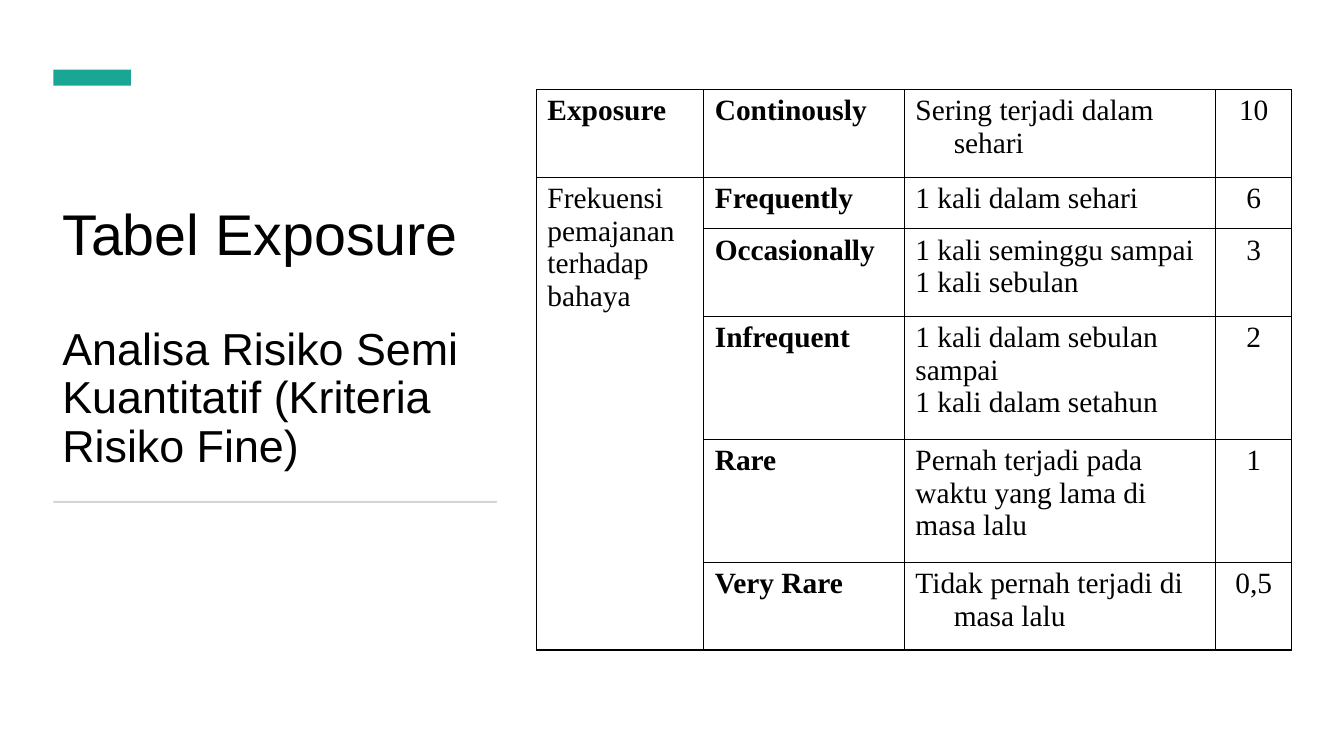
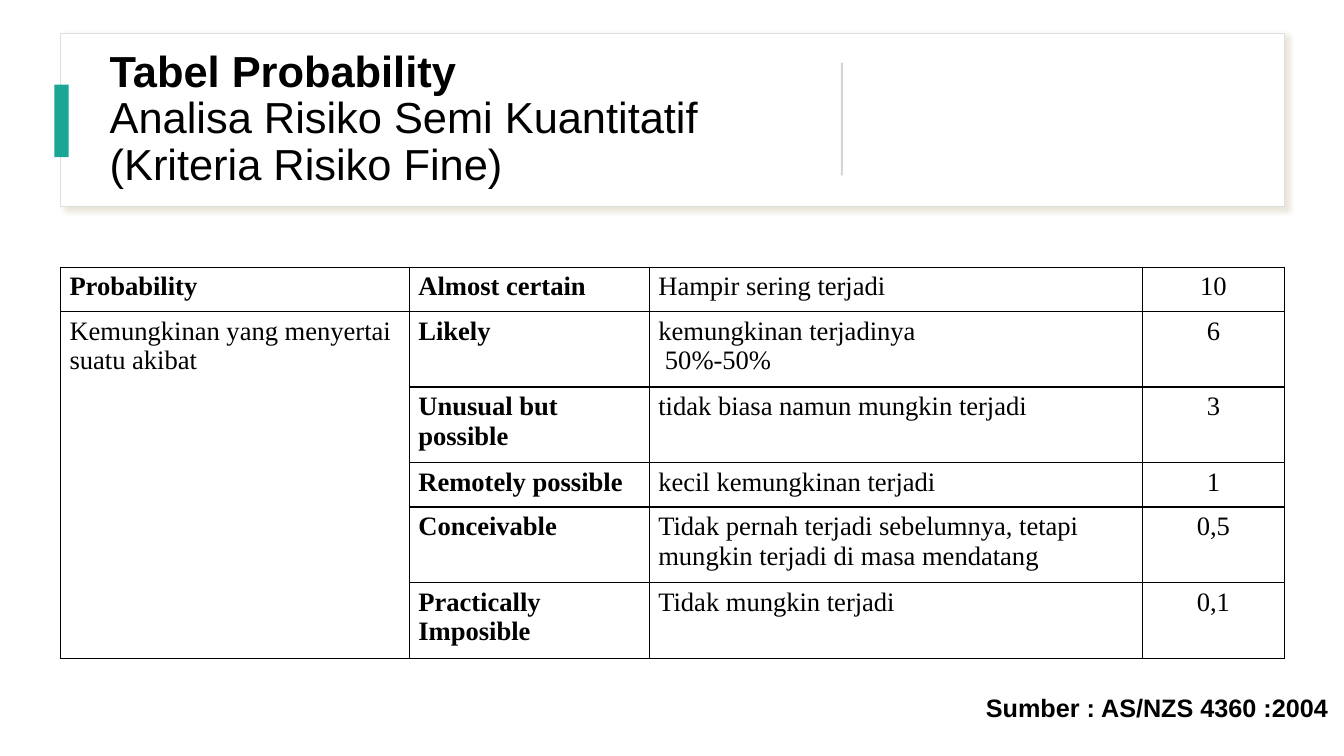
from dataclasses import dataclass

from lxml.etree import SubElement
from pptx import Presentation
from pptx.dml.color import RGBColor
from pptx.enum.shapes import MSO_SHAPE as Preset
from pptx.enum.text import MSO_ANCHOR as Anchor, PP_ALIGN as Align
from pptx.oxml.ns import qn
from pptx.shapes.autoshape import Shape
from pptx.slide import Slide
from pptx.table import _Cell as Cell
from pptx.text.text import _Paragraph as Paragraph
from pptx.util import Inches, Pt

COLORS = {
    "text": "000000",
    "paper": "FFFFFF",
    "accent": "19A695",
    "rule": "D5D5D5",
    "frame": "DEDEDE",
    "shadow": "D5D0B5",
}
TITLE_FONT = "Arial"
TABLE_FONT = "Times New Roman"
HANGING_INDENT = 0.38
SUBTITLE = "Analisa Risiko Semi Kuantitatif (Kriteria Risiko Fine)"


@dataclass(frozen=True)
class Box:
    left: float
    top: float
    width: float
    height: float

    def lengths(self) -> list[int]:
        return [Inches(n) for n in (self.left, self.top, self.width, self.height)]


@dataclass(frozen=True)
class Level:
    name: str
    meaning: str
    score: str
    hanging: bool = False


@dataclass(frozen=True)
class Line:
    text: str
    size: float
    bold: bool = False
    gap: float = 0


@dataclass(frozen=True)
class RiskTable:
    factor: str
    description: str
    levels: list[Level]
    box: Box
    columns: list[float]
    rows: list[float]
    size: float
    margin: float


EXPOSURE = RiskTable(
    "Exposure",
    "Frekuensi pemajanan terhadap bahaya",
    [
        Level("Continously", "Sering terjadi dalam sehari", "10", hanging=True),
        Level("Frequently", "1 kali dalam sehari", "6"),
        Level("Occasionally", "1 kali seminggu sampai\n1 kali sebulan", "3"),
        Level("Infrequent", "1 kali dalam sebulan sampai\n1 kali dalam setahun", "2"),
        Level("Rare", "Pernah terjadi pada waktu yang lama di masa lalu", "1"),
        Level("Very Rare", "Tidak pernah terjadi di masa lalu", "0,5", hanging=True),
    ],
    Box(5.32, 0.89, 7.49, 5.55),
    columns=[1.66, 1.99, 3.09, 0.75],
    rows=[0.87, 0.51, 0.87, 1.22, 1.22, 0.87],
    size=21,
    margin=0.11,
)
PROBABILITY = RiskTable(
    "Probability",
    "Kemungkinan yang menyertai suatu akibat",
    [
        Level("Almost certain", "Hampir sering terjadi", "10"),
        Level("Likely", "kemungkinan terjadinya\n 50%-50%", "6"),
        Level("Unusual but possible", "tidak biasa namun mungkin terjadi", "3"),
        Level("Remotely possible", "kecil kemungkinan terjadi", "1"),
        Level(
            "Conceivable",
            "Tidak pernah terjadi sebelumnya, tetapi mungkin terjadi di masa mendatang",
            "0,5",
        ),
        Level("Practically Imposible", "Tidak mungkin terjadi", "0,1"),
    ],
    Box(0.6, 2.65, 12.14, 3.86),
    columns=[3.46, 2.38, 4.89, 1.41],
    rows=[0.44, 0.75, 0.75, 0.44, 0.75, 0.75],
    size=19,
    margin=0.09,
)


def color(name: str) -> RGBColor:
    return RGBColor.from_string(COLORS[name])


def write(para: Paragraph, text: str, *, font: str, size: float, bold: bool = False) -> None:
    span = para.add_run()
    span.text = text
    span.font.name = font
    span.font.size = Pt(size)
    span.font.bold = bold
    span.font.color.rgb = color("text")


def add_text(page: Slide, box: Box, lines: list[Line], anchor: Anchor, spacing: float = 1) -> None:
    frame = page.shapes.add_textbox(*box.lengths()).text_frame
    frame.word_wrap = True
    frame.vertical_anchor = anchor
    for index, line in enumerate(lines):
        para = frame.add_paragraph() if index else frame.paragraphs[0]
        para.line_spacing = spacing
        para.space_before = Pt(line.gap)
        write(para, line.text, font=TITLE_FONT, size=line.size, bold=line.bold)


def add_title(page: Slide, box: Box, lines: list[Line], anchor: Anchor) -> None:
    add_text(page, box, lines, anchor, spacing=0.9)


def add_bar(page: Slide, box: Box, fill: str) -> Shape:
    bar = page.shapes.add_shape(Preset.RECTANGLE, *box.lengths())
    bar.shadow.inherit = False
    bar.fill.solid()
    bar.fill.fore_color.rgb = color(fill)
    bar.line.fill.background()
    return bar


def add_title_card(page: Slide, box: Box) -> None:
    """Draw the white framed panel with its soft shadow."""
    card = add_bar(page, box, "paper")
    card.line.color.rgb = color("frame")
    card.line.width = Pt(1)
    effects = card._element.spPr.find(qn("a:effectLst"))
    shadow = SubElement(
        effects,
        qn("a:outerShdw"),
        blurRad=str(Pt(4)),
        dist=str(Pt(3)),
        dir=str(45 * 60000),
        algn="tl",
        rotWithShape="0",
    )
    tint = SubElement(shadow, qn("a:srgbClr"), val=COLORS["shadow"])
    SubElement(tint, qn("a:alpha"), val="50000")


def add_borders(cell: Cell) -> None:
    properties = cell._tc.get_or_add_tcPr()
    for side in ("lnL", "lnR", "lnT", "lnB"):
        border = SubElement(properties, qn(f"a:{side}"), w=str(Pt(1)))
        fill = SubElement(border, qn("a:solidFill"))
        SubElement(fill, qn("a:srgbClr"), val=COLORS["text"])


def fill_cell(
    cell: Cell,
    text: str,
    *,
    size: float,
    bold: bool = False,
    align: Align = Align.LEFT,
    hanging: bool = False,
) -> None:
    for index, line in enumerate(text.split("\n")):
        para = cell.text_frame.add_paragraph() if index else cell.text_frame.paragraphs[0]
        para.alignment = align
        if hanging:
            properties = para._p.get_or_add_pPr()
            properties.set("marL", str(Inches(HANGING_INDENT)))
            properties.set("indent", str(-Inches(HANGING_INDENT)))
        write(para, line, font=TABLE_FONT, size=size, bold=bold)


def add_risk_table(page: Slide, risk: RiskTable) -> None:
    table = page.shapes.add_table(
        len(risk.rows), len(risk.columns), *risk.box.lengths()
    ).table
    table.first_row = table.horz_banding = False
    for column, width in zip(table.columns, risk.columns):
        column.width = Inches(width)
    for row, height in zip(table.rows, risk.rows):
        row.height = Inches(height)
    for cell in table.iter_cells():
        add_borders(cell)
        cell.fill.background()
        cell.margin_left = cell.margin_right = Inches(risk.margin)
        cell.margin_top = cell.margin_bottom = Inches(0.05)
    table.cell(1, 0).merge(table.cell(len(risk.rows) - 1, 0))
    fill_cell(table.cell(0, 0), risk.factor, size=risk.size, bold=True)
    fill_cell(table.cell(1, 0), risk.description, size=risk.size)
    for index, level in enumerate(risk.levels):
        fill_cell(table.cell(index, 1), level.name, size=risk.size, bold=True)
        fill_cell(table.cell(index, 2), level.meaning, size=risk.size, hanging=level.hanging)
        fill_cell(table.cell(index, 3), level.score, size=risk.size, align=Align.CENTER)


def build_exposure(page: Slide) -> None:
    lines = [Line("Tabel Exposure", 41), Line(SUBTITLE, 32, gap=42)]
    add_title(page, Box(0.52, 1.23, 4.4, 3.5), lines, Anchor.BOTTOM)
    add_bar(page, Box(0.53, 0.69, 0.77, 0.16), "accent")
    add_bar(page, Box(0.53, 4.97, 4.4, 0.02), "rule")
    add_risk_table(page, EXPOSURE)


def build_probability(page: Slide) -> None:
    add_title_card(page, Box(0.6, 0.33, 12.14, 1.72))
    lines = [Line("Tabel Probability", 31, bold=True), Line(SUBTITLE, 31)]
    add_title(page, Box(0.99, 0.44, 7.03, 1.5), lines, Anchor.MIDDLE)
    add_bar(page, Box(0.54, 0.84, 0.14, 0.72), "accent")
    add_bar(page, Box(8.34, 0.62, 0.02, 1.12), "rule")
    add_risk_table(page, PROBABILITY)
    source = Line("Sumber : AS/NZS 4360 :2004", 18, bold=True)
    add_text(page, Box(9.68, 6.76, 3.65, 0.51), [source], Anchor.MIDDLE)


def main() -> None:
    deck = Presentation()
    deck.slide_width = Inches(13.33)
    deck.slide_height = Inches(7.5)
    for build in (build_exposure, build_probability):
        build(deck.slides.add_slide(deck.slide_layouts[6]))
    deck.save("out.pptx")


if __name__ == "__main__":
    main()
